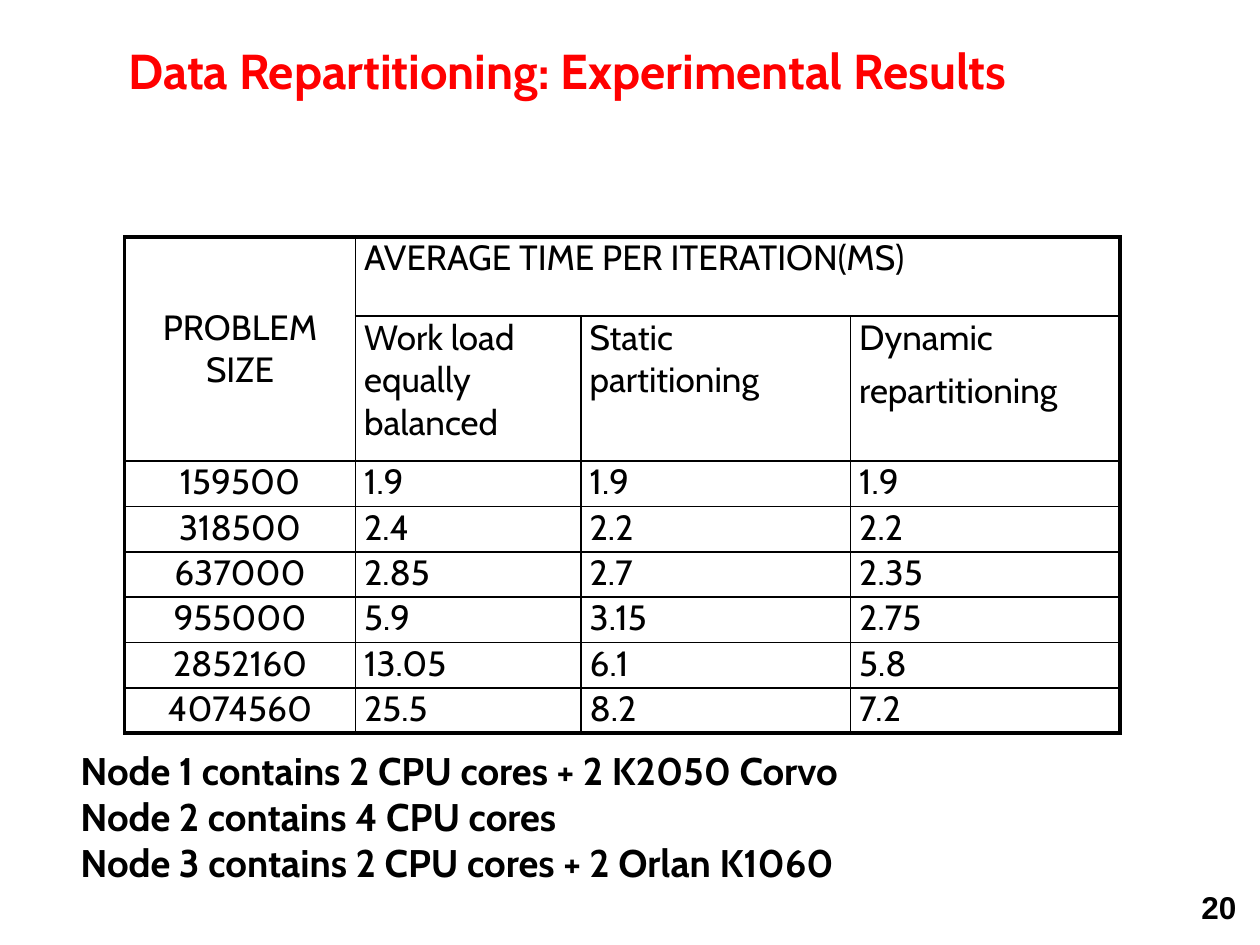
from lxml.etree import SubElement
from pptx import Presentation
from pptx.dml.color import RGBColor
from pptx.enum.text import MSO_ANCHOR, PP_ALIGN
from pptx.oxml.ns import qn
from pptx.util import Inches, Pt

RED = RGBColor(0xFF, 0x00, 0x00)
BLACK = RGBColor(0x00, 0x00, 0x00)

OUTER_BORDER = Pt(2.25)
INNER_BORDER = Pt(1)

COLUMN_WIDTHS = [1.83, 1.79, 2.14, 2.14]
HEADER_HEIGHTS = [0.63, 1.15]
RESULT_HEIGHT = 0.36

HEADERS = [
    ["PROBLEM SIZE", "AVERAGE TIME PER ITERATION(MS)", "", ""],
    ["", "Work load equally balanced", "Static partitioning",
     "Dynamic\nrepartitioning"],
]
RESULTS = [
    ["159500", "1.9", "1.9", "1.9"],
    ["318500", "2.4", "2.2", "2.2"],
    ["637000", "2.85", "2.7", "2.35"],
    ["955000", "5.9", "3.15", "2.75"],
    ["2852160", "13.05", "6.1", "5.8"],
    ["4074560", "25.5", "8.2", "7.2"],
]
NODES = [
    "Node 1 contains 2 CPU cores + 2 K2050 Corvo",
    "Node 2 contains 4 CPU cores",
    "Node 3 contains 2 CPU cores + 2 Orlan K1060",
]


class SlideBuilder:
    """Holds the text style and the slide being filled."""

    def __init__(self, slide, font_name="Cabin"):
        self.slide = slide
        self.font_name = font_name

    def style(self, paragraph, size, color=BLACK, bold=False, font_name=None):
        font = paragraph.font
        font.name = font_name or self.font_name
        font.size = Pt(size)
        font.bold = bold
        font.color.rgb = color

    def text(self, lines, left, top, width, height, size, color=BLACK,
             align=PP_ALIGN.LEFT, anchor=MSO_ANCHOR.TOP, font_name=None):
        frame = self.slide.shapes.add_textbox(
            Inches(left), Inches(top), Inches(width), Inches(height)).text_frame
        frame.word_wrap = True
        frame.vertical_anchor = anchor
        frame.text = "\n".join(lines)
        for paragraph in frame.paragraphs:
            paragraph.alignment = align
            self.style(paragraph, size, color, True, font_name)

    def table(self, headers, results, left, top):
        rows = headers + results
        heights = HEADER_HEIGHTS + [RESULT_HEIGHT] * len(results)
        table = self.slide.shapes.add_table(
            len(rows), len(COLUMN_WIDTHS), Inches(left), Inches(top),
            Inches(sum(COLUMN_WIDTHS)), Inches(sum(heights))).table
        table.first_row = table.horz_banding = False
        for column, width in zip(table.columns, COLUMN_WIDTHS):
            column.width = Inches(width)
        for row, height in zip(table.rows, heights):
            row.height = Inches(height)
        table.cell(0, 0).merge(table.cell(1, 0))
        table.cell(0, 1).merge(table.cell(0, 3))

        for r, values in enumerate(rows):
            for c, value in enumerate(values):
                cell = table.cell(r, c)
                self.borders(cell, r, c, len(rows), len(values))
                cell.fill.background()
                if not cell.is_spanned:
                    self.cell_text(cell, value, c == 0, r >= len(headers))

    def cell_text(self, cell, value, is_size, is_result):
        cell.margin_left = cell.margin_right = Inches(0.07)
        cell.margin_top = cell.margin_bottom = 0
        if is_size and not is_result:
            cell.vertical_anchor = MSO_ANCHOR.MIDDLE
        cell.text = value
        for paragraph in cell.text_frame.paragraphs:
            if is_size:
                paragraph.alignment = PP_ALIGN.CENTER
            elif is_result:
                paragraph.alignment = PP_ALIGN.JUSTIFY
            paragraph.space_after = Pt(4 if is_size and is_result else 6)
            self.style(paragraph, 20)

    def borders(self, cell, row, column, row_count, column_count):
        """Draw heavy lines on the table's rim and thin ones inside it."""
        on_rim = {
            "a:lnL": column == 0,
            "a:lnR": column + cell.span_width == column_count,
            "a:lnT": row == 0,
            "a:lnB": row + cell.span_height == row_count,
        }
        properties = cell._tc.get_or_add_tcPr()
        for tag, is_rim in on_rim.items():
            width = OUTER_BORDER if is_rim else INNER_BORDER
            line = SubElement(properties, qn(tag), w=str(int(width)))
            fill = SubElement(line, qn("a:solidFill"))
            SubElement(fill, qn("a:srgbClr"), val=str(BLACK))


def main():
    presentation = Presentation()
    presentation.slide_width = Inches(10)
    presentation.slide_height = Inches(7.5)
    builder = SlideBuilder(
        presentation.slides.add_slide(presentation.slide_layouts[6]))

    builder.text(["Data Repartitioning: Experimental Results"],
                 0.92, 0.22, 8, 0.67, 28, RED, anchor=MSO_ANCHOR.MIDDLE)
    builder.text(["20"], 7.83, 7, 2.08, 0.33, 18,
                 align=PP_ALIGN.RIGHT, font_name="Arial")
    builder.table(HEADERS, RESULTS, 0.99, 1.88)
    builder.text(NODES, 0.54, 5.88, 9.04, 1.21, 22)

    presentation.save("out.pptx")


if __name__ == "__main__":
    main()
